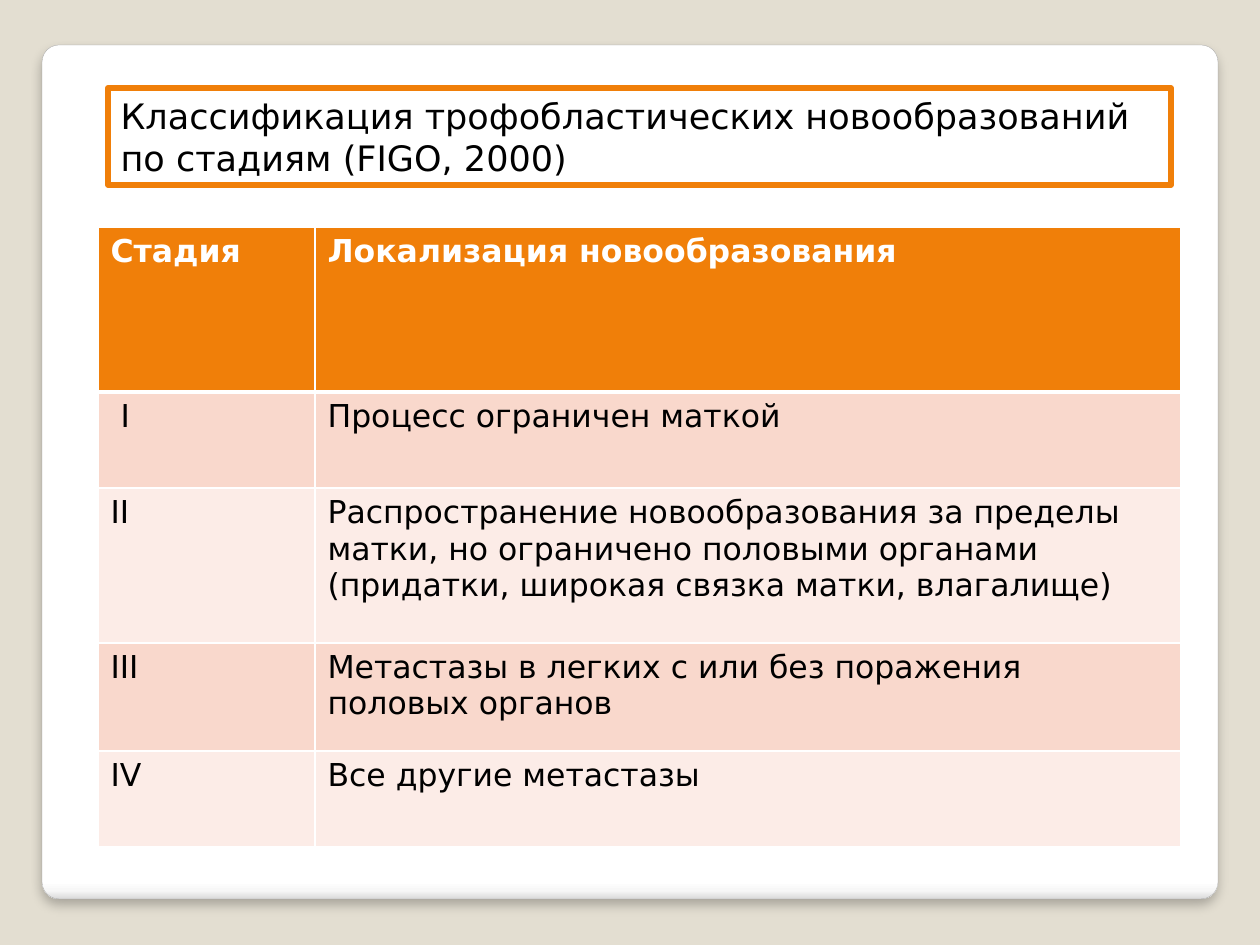
from pptx import Presentation
from pptx.dml.color import RGBColor
from pptx.enum.shapes import MSO_SHAPE as Shape
from pptx.enum.text import MSO_ANCHOR as Anchor, MSO_AUTO_SIZE as AutoSize, PP_ALIGN as Align
from pptx.oxml import parse_xml
from pptx.oxml.ns import nsdecls, qn
from pptx.util import Emu, Pt

PX_PER_INCH = 126
FONT = "DejaVu Sans"
BEIGE = RGBColor(0xE3, 0xDE, 0xD1)
WHITE = RGBColor(0xFF, 0xFF, 0xFF)
BLACK = RGBColor(0x00, 0x00, 0x00)
ORANGE = RGBColor(0xF0, 0x7F, 0x09)
GREY = RGBColor(0xA4, 0xA4, 0xA4)
BANDS = [RGBColor(0xF9, 0xD8, 0xCC), RGBColor(0xFC, 0xEC, 0xE7)]
CARD_STOPS = [(0, "FFFFFF"), (98, "FFFFFF"), (99, "F7F7F7"), (100, "DADADA")]

TITLE = "Классификация трофобластических новообразований по стадиям (FIGO, 2000)"
STAGES = [
    ("Стадия", "Локализация новообразования"),
    (" I", "Процесс ограничен маткой"),
    ("II", "Распространение новообразования за пределы матки, но ограничено "
           "половыми органами (придатки, широкая связка матки, влагалище)"),
    ("III", "Метастазы в легких с или без поражения половых органов"),
    ("IV", "Все другие метастазы"),
]
COLUMN_WIDTHS = [217, 866]
ROW_HEIGHTS = [165, 96, 155, 108, 96]


def px(length):
    return Emu(round(length * 914400 / PX_PER_INCH))


def write(frame, text, size, color, bold=False):
    frame.word_wrap = True
    para = frame.paragraphs[0]
    para.alignment = Align.LEFT
    span = para.add_run()
    span.text = text
    span.font.color.rgb = color
    for name, value in {"name": FONT, "size": Pt(size), "bold": bold}.items():
        setattr(span.font, name, value)


def add_card(page, left, top, width, height):
    card = page.shapes.add_shape(Shape.ROUNDED_RECTANGLE, *map(px, (left, top, width, height)))
    card.adjustments[0] = 0.02
    card.line.color.rgb = GREY
    card.line.width = Pt(0.16)
    # Shaded lower edge
    card.fill.gradient()
    card.fill.gradient_angle = 270
    stops = card.element.spPr.find(".//" + qn("a:gsLst"))
    stops.clear()
    for percent, color in CARD_STOPS:
        stops.append(parse_xml(
            f'<a:gs {nsdecls("a")} pos="{percent * 1000}"><a:srgbClr val="{color}"/></a:gs>'))
    # Soft shadow below
    card.shadow.inherit = False
    card.element.spPr.find(qn("a:effectLst")).append(parse_xml(
        f'<a:outerShdw {nsdecls("a")} blurRad="{Pt(6)}" dist="{Pt(4)}" dir="5400000" '
        'algn="t" rotWithShape="0"><a:srgbClr val="000000"><a:alpha val="25000"/>'
        '</a:srgbClr></a:outerShdw>'))
    # The card lies behind the title
    page.shapes.title.element.addprevious(card.element)


def place_title(page, left, top, width, height):
    title = page.shapes.title
    box = {"left": left, "top": top, "width": width, "height": height}
    for name, value in box.items():
        setattr(title, name, px(value))
    title.fill.solid()
    title.fill.fore_color.rgb = WHITE
    title.line.color.rgb = ORANGE
    title.line.width = Pt(3.35)
    frame = title.text_frame
    frame.auto_size = AutoSize.NONE
    frame.vertical_anchor = Anchor.TOP
    write(frame, TITLE, 20, BLACK)


def set_borders(cell, widths):
    for side, width in widths.items():
        cell._tc.get_or_add_tcPr().append(parse_xml(
            f'<a:ln{side} {nsdecls("a")} w="{Pt(width)}"><a:solidFill>'
            f'<a:srgbClr val="{WHITE}"/></a:solidFill></a:ln{side}>'))


def add_stage_table(page, left, top):
    size = sum(COLUMN_WIDTHS), sum(ROW_HEIGHTS)
    table = page.shapes.add_table(
        len(STAGES), len(COLUMN_WIDTHS), *map(px, (left, top, *size))).table
    for column, width in zip(table.columns, COLUMN_WIDTHS):
        column.width = px(width)
    for row, height in zip(table.rows, ROW_HEIGHTS):
        row.height = px(height)
    for r, texts in enumerate(STAGES):
        header = r == 0
        for c, text in enumerate(texts):
            cell = table.cell(r, c)
            set_borders(cell, {"L": 1, "R": 1, "T": 3 if r == 1 else 1, "B": 3 if header else 1})
            cell.fill.solid()
            cell.fill.fore_color.rgb = ORANGE if header else BANDS[(r - 1) % 2]
            write(cell.text_frame, text, 18, WHITE if header else BLACK, header)


def main():
    deck = Presentation()
    deck.slide_width, deck.slide_height = px(1260), px(945)
    page = deck.slides.add_slide(deck.slide_layouts[5])
    page.background.fill.solid()
    page.background.fill.fore_color.rgb = BEIGE
    add_card(page, 42, 45, 1176, 854)
    place_title(page, 108, 88, 1063, 97)
    add_stage_table(page, 98, 227)
    deck.save("out.pptx")


if __name__ == "__main__":
    main()
